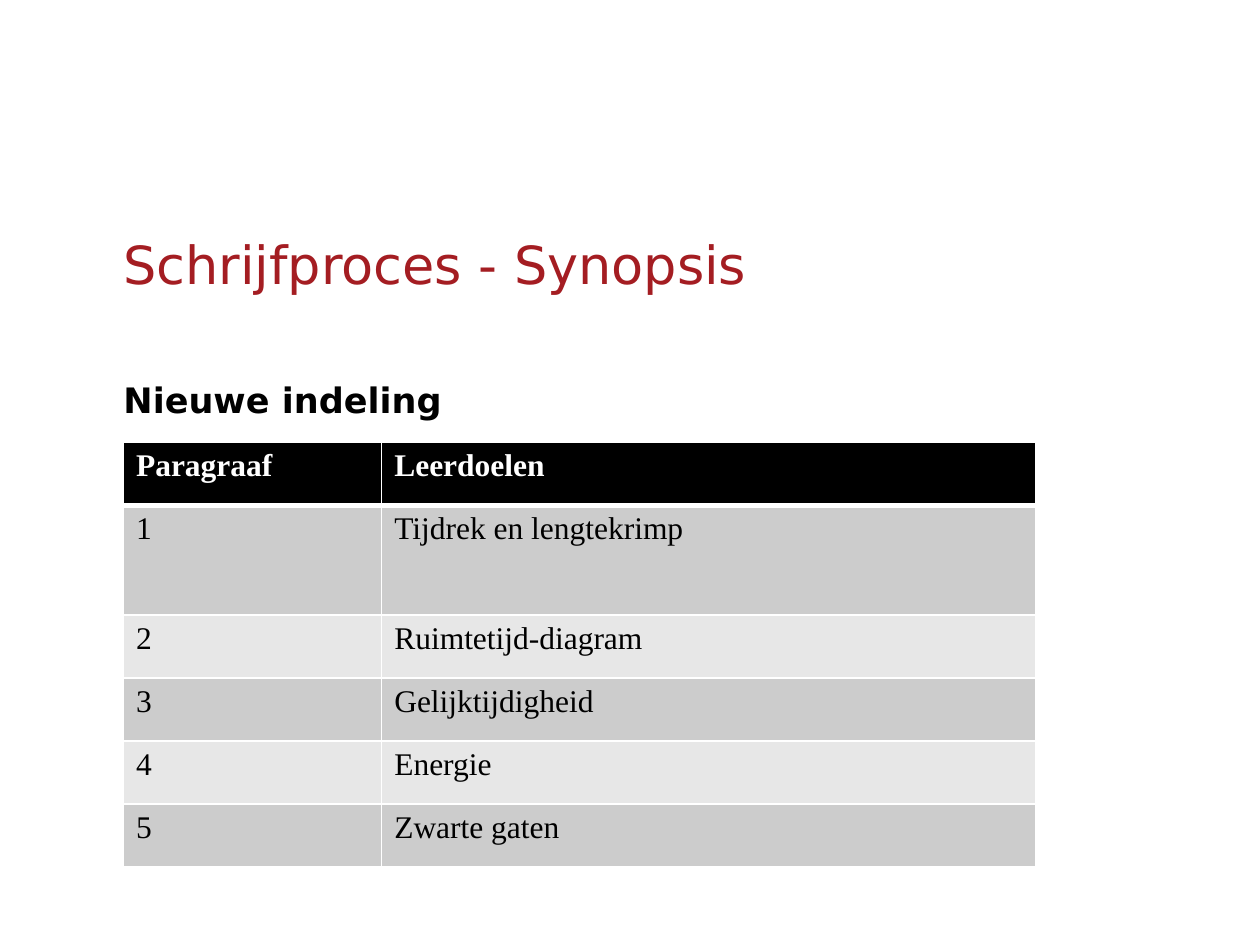
from lxml import etree
from pptx import Presentation
from pptx.dml.color import RGBColor
from pptx.enum.text import MSO_ANCHOR, MSO_AUTO_SIZE, PP_ALIGN
from pptx.oxml.ns import qn
from pptx.util import Inches, Pt

LEFT, TOP, MIDDLE = PP_ALIGN.LEFT, MSO_ANCHOR.TOP, MSO_ANCHOR.MIDDLE
FIXED = MSO_AUTO_SIZE.NONE
SANS, SERIF = "DejaVu Sans", "Times New Roman"
ROWS = [
    ("Paragraaf", "Leerdoelen"),
    ("1", "Tijdrek en lengtekrimp"),
    ("2", "Ruimtetijd-diagram"),
    ("3", "Gelijktijdigheid"),
    ("4", "Energie"),
    ("5", "Zwarte gaten"),
]
WIDTHS = [2.05, 5.19]
HEIGHTS = [0.5, 0.87, 0.5, 0.5, 0.5, 0.5]


def color(code):
    return RGBColor.from_string(code)


def style(para, face, size, code, bold=False):
    para.alignment = LEFT
    font = para.font
    font.name, font.size, font.bold = face, Pt(size), bold
    font.color.rgb = color(code)


def place(shape, box, text, anchor):
    shape.left, shape.top, shape.width, shape.height = map(Inches, box)
    frame = shape.text_frame
    frame.text = text
    frame.word_wrap = True
    frame.auto_size = FIXED
    frame.vertical_anchor = anchor
    frame.margin_left = frame.margin_right = 0
    frame.margin_top = frame.margin_bottom = 0
    return frame.paragraphs[0]


def add_title(slide, box):
    para = place(slide.shapes.title, box, "Schrijfproces - Synopsis", MIDDLE)
    style(para, SANS, 30, "A41D22")


def add_body(slide, box):
    para = place(slide.placeholders[1], box, "Nieuwe indeling", TOP)
    props = para._p.get_or_add_pPr()
    props.set("marL", "0")
    props.set("indent", "0")
    etree.SubElement(props, qn("a:buNone"))
    para.line_spacing = 1.15
    para.space_before = Pt(0)
    style(para, SANS, 20, "000000", True)


def add_edge(cell, side, width):
    props = cell._tc.get_or_add_tcPr()
    line = etree.SubElement(props, qn(f"a:ln{side}"), w=str(Pt(width)))
    fill = etree.SubElement(line, qn("a:solidFill"))
    etree.SubElement(fill, qn("a:srgbClr"), val="FFFFFF")


def add_goals(slide, box):
    frame = slide.shapes.add_table(len(ROWS), len(WIDTHS), *map(Inches, box))
    table = frame.table
    for col, width in zip(table.columns, WIDTHS):
        col.width = Inches(width)
    for row, height in zip(table.rows, HEIGHTS):
        row.height = Inches(height)
    for i, words in enumerate(ROWS):
        head = i == 0
        shade = "000000" if head else ("E7E7E7", "CCCCCC")[i % 2]
        for j, text in enumerate(words):
            cell = table.cell(i, j)
            cell.text = text
            ink = "FFFFFF" if head else "000000"
            style(cell.text_frame.paragraphs[0], SERIF, 18, ink, head)
            for side in "LRTB":
                thick = (head and side == "B") or (i == 1 and side == "T")
                add_edge(cell, side, 3 if thick else 1)
            cell.fill.solid()
            cell.fill.fore_color.rgb = color(shade)


def main():
    deck = Presentation()
    deck.slide_width, deck.slide_height = Inches(10), Inches(7.5)
    slide = deck.slides.add_slide(deck.slide_layouts[1])
    add_title(slide, (0.98, 1.57, 7.29, 1.04))
    add_body(slide, (0.98, 2.95, 7.29, 4.12))
    add_goals(slide, (0.98, 3.51, sum(WIDTHS), sum(HEIGHTS)))
    deck.save("out.pptx")


if __name__ == "__main__":
    main()
